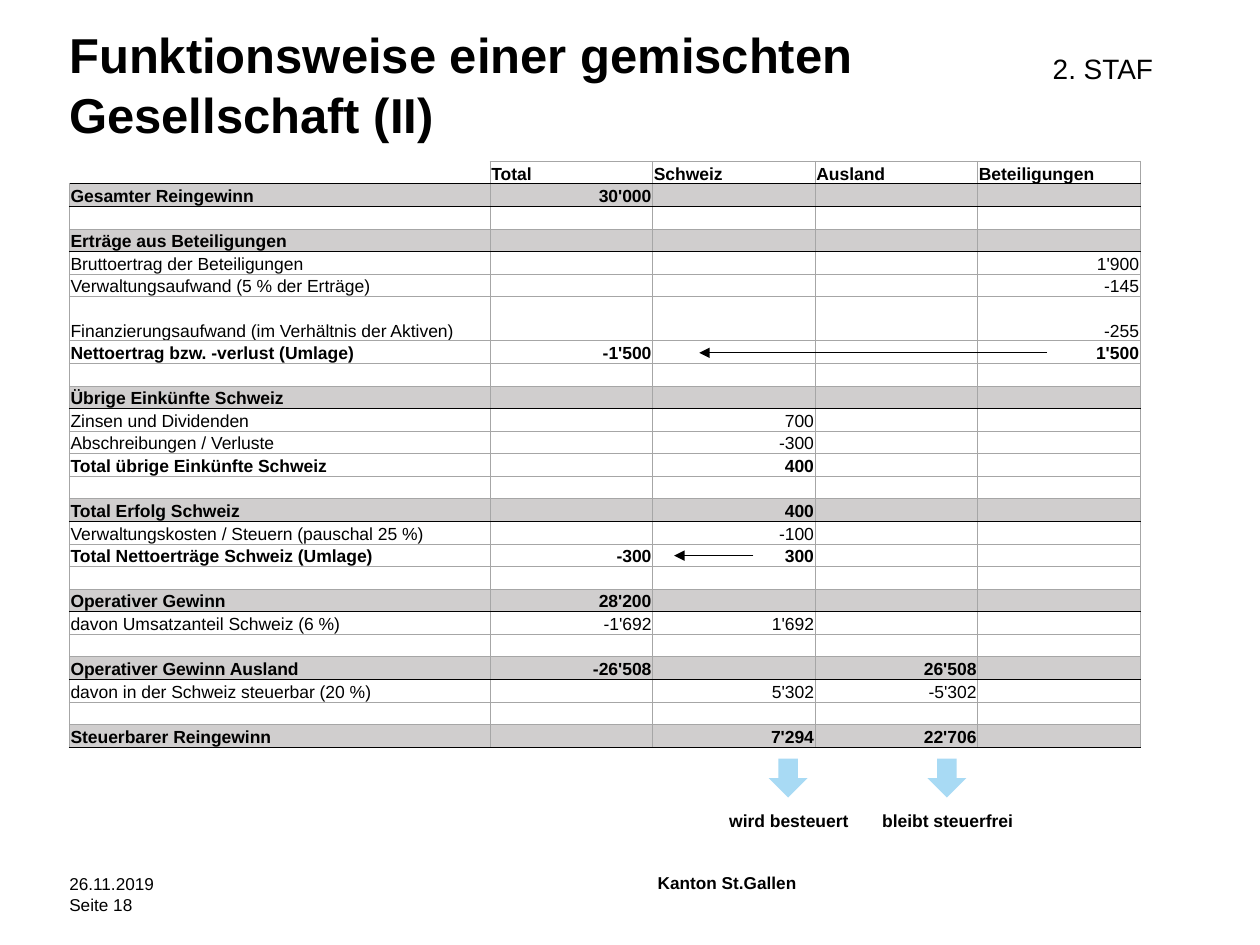
"""Build the slide on how a mixed company is taxed."""
from dataclasses import dataclass
from enum import Enum

import pptx
import pptx.dml.color
import pptx.enum.shapes
import pptx.enum.text
import pptx.oxml.ns
import pptx.util
from lxml import etree

Inches = pptx.util.Inches
Pt = pptx.util.Pt
Align = pptx.enum.text.PP_ALIGN
Anchor = pptx.enum.text.MSO_ANCHOR
qn = pptx.oxml.ns.qn

BLACK, WHITE, GRID, BAND, SKY = "000000", "FFFFFF", "A6A6A6", "D0CECE", "A8DAF4"
TABLE_LEFT, TABLE_TOP, TABLE_HEIGHT = 0.55, 1.28, 4.65
LABEL_WIDTH, VALUE_WIDTH, TALL_ROW = 3.34, 1.29, 0.35


class Style(Enum):
    HEADER = "header"
    SECTION = "section"
    ITEM = "item"
    TOTAL = "total"


@dataclass
class Entry:
    label: str = ""
    total: str = ""
    swiss: str = ""
    foreign: str = ""
    holdings: str = ""
    style: Style = Style.ITEM
    tall: bool = False

    def texts(self) -> tuple[str, ...]:
        return self.label, self.total, self.swiss, self.foreign, self.holdings


@dataclass
class Caption:
    text: str
    left: float
    top: float
    width: float
    height: float
    size: float = 9.8
    bold: bool = False
    align: Align = Align.LEFT
    inset_x: float = 0
    inset_y: float = 0
    before: float = 0


@dataclass
class Transfer:
    start: float
    end: float
    y: float


ENTRIES = [
    Entry("", "Total", "Schweiz", "Ausland", "Beteiligungen", Style.HEADER),
    Entry("Gesamter Reingewinn", total="30'000", style=Style.SECTION),
    Entry(),
    Entry("Erträge aus Beteiligungen", style=Style.SECTION),
    Entry("Bruttoertrag der Beteiligungen", holdings="1'900"),
    Entry("Verwaltungsaufwand (5 % der Erträge)", holdings="-145"),
    Entry("Finanzierungsaufwand (im Verhältnis der Aktiven)", holdings="-255", tall=True),
    Entry("Nettoertrag bzw. -verlust (Umlage)", total="-1'500", holdings="1'500", style=Style.TOTAL),
    Entry(),
    Entry("Übrige Einkünfte Schweiz", style=Style.SECTION),
    Entry("Zinsen und Dividenden", swiss="700"),
    Entry("Abschreibungen / Verluste", swiss="-300"),
    Entry("Total übrige Einkünfte Schweiz", swiss="400", style=Style.TOTAL),
    Entry(),
    Entry("Total Erfolg Schweiz", swiss="400", style=Style.SECTION),
    Entry("Verwaltungskosten / Steuern (pauschal 25 %)", swiss="-100"),
    Entry("Total Nettoerträge Schweiz (Umlage)", total="-300", swiss="300", style=Style.TOTAL),
    Entry(),
    Entry("Operativer Gewinn", total="28'200", style=Style.SECTION),
    Entry("davon Umsatzanteil Schweiz (6 %)", total="-1'692", swiss="1'692"),
    Entry(),
    Entry("Operativer Gewinn Ausland", total="-26'508", foreign="26'508", style=Style.SECTION),
    Entry("davon in der Schweiz steuerbar (20 %)", swiss="5'302", foreign="-5'302"),
    Entry(),
    Entry("Steuerbarer Reingewinn", swiss="7'294", foreign="22'706", style=Style.SECTION),
]
CAPTIONS = [
    Caption("Kanton St.Gallen", 5.22, 6.92, 3.98, 0.17, bold=True),
    Caption("26.11.2019", 0.55, 6.93, 2.24, 0.14),
    Caption("Seite 18", 0.55, 7.1, 2.24, 0.14),
    Caption("wird besteuert", 5.67, 6.43, 1.18, 0.24, 10, True, Align.CENTER),
    Caption("bleibt steuerfrei", 6.93, 6.43, 1.18, 0.24, 10, True, Align.CENTER),
    Caption("2. STAF", 5.39, 0.36, 3.86, 0.3, 16, False, Align.RIGHT, 0.1, 0.05, 3.2),
]
OUTCOME_LEFTS = [6.1, 7.36]
TRANSFERS = [Transfer(8.31, 5.55, 2.8), Transfer(5.98, 5.35, 4.41)]


def color(value: str) -> pptx.dml.color.RGBColor:
    return pptx.dml.color.RGBColor.from_string(value)


def format_runs(paragraph, size: float, bold: bool) -> None:
    for run in paragraph.runs:
        run.font.name = "Arial"
        run.font.size = Pt(size)
        run.font.bold = bold
        run.font.color.rgb = color(BLACK)


def set_insets(frame, x: float, top: float, bottom: float) -> None:
    frame.margin_left = frame.margin_right = Inches(x)
    frame.margin_top, frame.margin_bottom = Inches(top), Inches(bottom)


def add_border(cell, side: str, hex_color: str) -> None:
    properties = cell._tc.get_or_add_tcPr()
    border = etree.SubElement(properties, qn(f"a:ln{side}"), w=str(Pt(0.5)))
    fill = etree.SubElement(border, qn("a:solidFill"))
    etree.SubElement(fill, qn("a:srgbClr"), val=hex_color)


def fill_cell(cell, text: str, entry: Entry, column: int, above: Style | None) -> None:
    ruled = (Style.HEADER, Style.SECTION)
    corner = entry.style is Style.HEADER and column == 0
    borders = {
        "L": GRID,
        "R": GRID,
        "T": BLACK if above in ruled else GRID,
        "B": BLACK if entry.style in ruled else GRID,
    }
    for side, hex_color in borders.items():
        add_border(cell, side, WHITE if corner and side in "LT" else hex_color)
    cell.fill.solid()
    cell.fill.fore_color.rgb = color(BAND if entry.style is Style.SECTION else WHITE)
    set_insets(cell, 0.01, 0.01, 0)
    cell.vertical_anchor = Anchor.BOTTOM
    paragraph = cell.text_frame.paragraphs[0]
    if text:
        paragraph.text = text
        paragraph.alignment = Align.RIGHT if column and entry.style is not Style.HEADER else Align.LEFT
        format_runs(paragraph, 10, entry.style is not Style.ITEM)
    else:
        etree.SubElement(paragraph._p, qn("a:endParaRPr"), sz="1000")


def add_profit_table(slide, entries: list[Entry]) -> None:
    widths = [LABEL_WIDTH] + [VALUE_WIDTH] * 4
    tall_count = sum(entry.tall for entry in entries)
    row_height = (TABLE_HEIGHT - tall_count * TALL_ROW) / (len(entries) - tall_count)
    table = slide.shapes.add_table(
        len(entries), len(widths), Inches(TABLE_LEFT), Inches(TABLE_TOP),
        Inches(sum(widths)), Inches(TABLE_HEIGHT)).table
    table.first_row = table.horz_banding = False
    for column, width in zip(table.columns, widths):
        column.width = Inches(width)
    above = None
    for row, entry in zip(table.rows, entries):
        row.height = Inches(TALL_ROW if entry.tall else row_height)
        for column, (cell, text) in enumerate(zip(row.cells, entry.texts())):
            fill_cell(cell, text, entry, column, above)
        above = entry.style


def add_caption(slide, caption: Caption) -> None:
    frame = slide.shapes.add_textbox(
        Inches(caption.left), Inches(caption.top),
        Inches(caption.width), Inches(caption.height)).text_frame
    frame.word_wrap = True
    set_insets(frame, caption.inset_x, caption.inset_y, caption.inset_y)
    paragraph = frame.paragraphs[0]
    paragraph.text = caption.text
    paragraph.alignment = caption.align
    paragraph.space_before = Pt(caption.before)
    format_runs(paragraph, caption.size, caption.bold)


def add_outcome_arrow(slide, left: float) -> None:
    arrow = slide.shapes.add_shape(
        pptx.enum.shapes.MSO_SHAPE.DOWN_ARROW,
        Inches(left), Inches(6.02), Inches(0.31), Inches(0.31))
    arrow.shadow.inherit = False
    arrow.fill.solid()
    arrow.fill.fore_color.rgb = color(SKY)
    arrow.line.fill.background()


def add_transfer(slide, transfer: Transfer) -> None:
    connector = slide.shapes.add_connector(
        pptx.enum.shapes.MSO_CONNECTOR.STRAIGHT, Inches(transfer.start),
        Inches(transfer.y), Inches(transfer.end), Inches(transfer.y))
    connector.line.color.rgb = color(BLACK)
    connector.line.width = Pt(0.75)
    etree.SubElement(connector.line._get_or_add_ln(), qn("a:tailEnd"), type="triangle")
    etree.SubElement(connector._element.spPr, qn("a:effectLst"))


def set_title(title, text: str) -> None:
    title.left, title.top = Inches(0.55), Inches(0.19)
    title.width, title.height = Inches(9.17), Inches(1.05)
    frame = title.text_frame
    frame.text = text
    frame.vertical_anchor = Anchor.TOP
    set_insets(frame, 0, 0, 0)
    paragraph = frame.paragraphs[0]
    paragraph.alignment = Align.LEFT
    paragraph.line_spacing = Pt(34)
    format_runs(paragraph, 28, True)


def main() -> None:
    deck = pptx.Presentation()
    deck.slide_width, deck.slide_height = Inches(10), Inches(7.5)
    slide = deck.slides.add_slide(deck.slide_layouts[5])
    set_title(slide.shapes.title, "Funktionsweise einer gemischten \vGesellschaft (II)")
    add_profit_table(slide, ENTRIES)
    for left in OUTCOME_LEFTS:
        add_outcome_arrow(slide, left)
    for caption in CAPTIONS:
        add_caption(slide, caption)
    for transfer in TRANSFERS:
        add_transfer(slide, transfer)
    deck.save("out.pptx")


if __name__ == "__main__":
    main()
